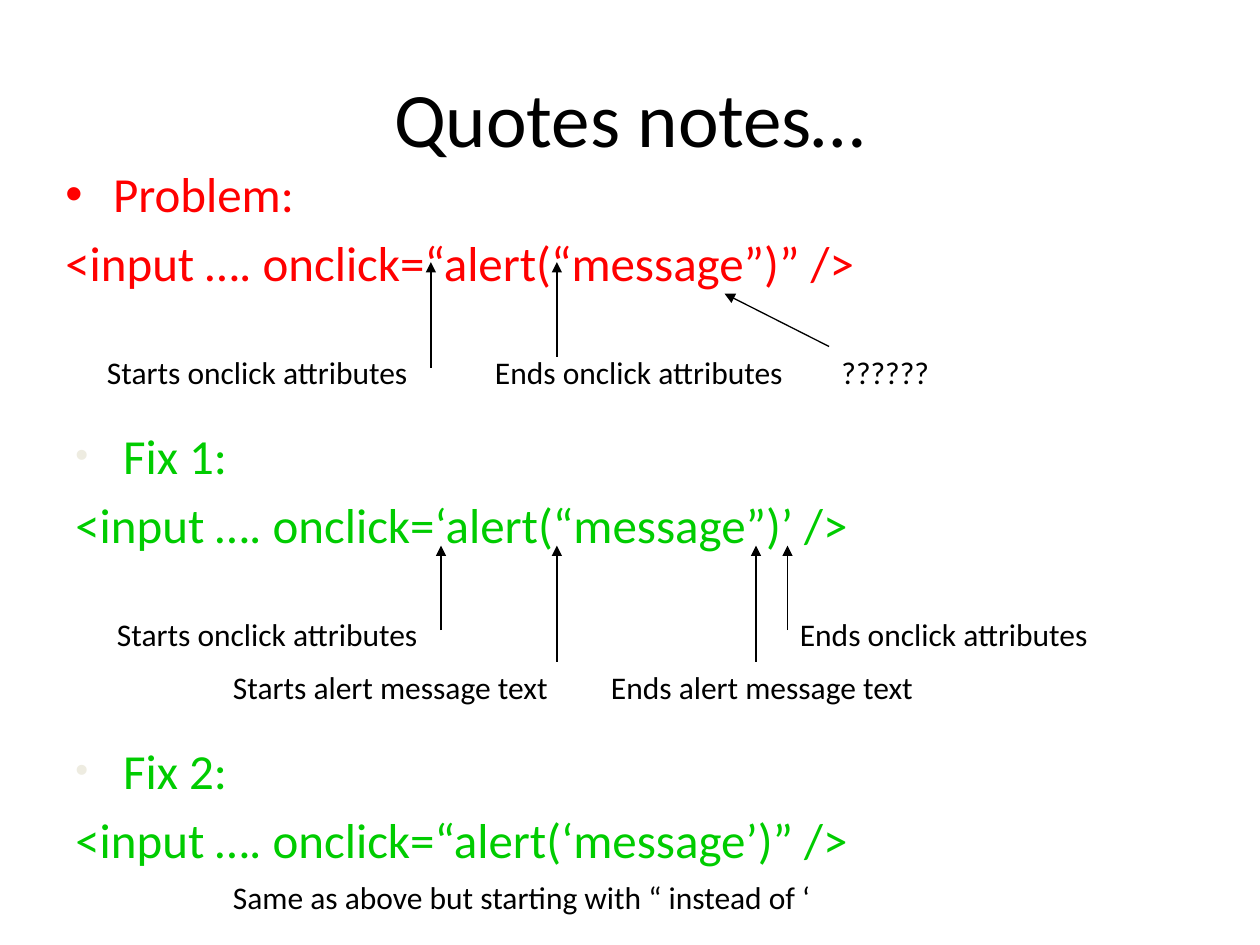
from dataclasses import dataclass
from typing import Optional

from lxml import etree
from pptx import Presentation
from pptx import util as u
from pptx.dml.color import RGBColor
from pptx.enum import shapes, text
from pptx.oxml import ns

FONT = "Calibri"
BLACK, RED, GREEN, PALE = "000000", "FF0000", "00CC00", "EEECE1"


@dataclass
class Example:
    left: float
    top: float
    heading: str
    code: str
    color: str
    bullet_color: Optional[str] = None


@dataclass
class Label:
    left: float
    top: float
    width: float
    words: str


@dataclass
class Arrow:
    start: tuple[float, float]
    end: tuple[float, float]


EXAMPLES = [
    Example(0.42, 1.25, "Problem:", "<input …. onclick=“alert(“message”)” />", RED),
    Example(0.5, 3.33, "Fix 1:", "<input …. onclick=‘alert(“message”)’ />", GREEN, PALE),
    Example(0.5, 5.83, "Fix 2:", "<input …. onclick=“alert(‘message’)” />", GREEN, PALE),
]
LABELS = [
    Label(0.75, 2.75, 2.78, "Starts onclick attributes"),
    Label(3.83, 2.75, 2.7, "Ends onclick attributes"),
    Label(6.58, 2.75, 1.03, "??????"),
    Label(0.83, 4.83, 2.67, "Starts onclick attributes"),
    Label(6.25, 4.83, 2.7, "Ends onclick attributes"),
    Label(1.75, 5.25, 2.75, "Starts alert message text"),
    Label(4.75, 5.25, 2.88, "Ends alert message text"),
    Label(1.75, 6.92, 5.78, "Same as above but starting with “ instead of ‘"),
]
ARROWS = [
    Arrow((3.42, 2.92), (3.42, 2.08)),
    Arrow((4.42, 2.83), (4.42, 2.08)),
    Arrow((6.58, 2.75), (5.75, 2.33)),
    Arrow((3.5, 5), (3.5, 4.33)),
    Arrow((6.25, 5), (6.25, 4.33)),
    Arrow((4.42, 5.25), (4.42, 4.33)),
    Arrow((6, 5.25), (6, 4.33)),
]


def rgb(color: str) -> RGBColor:
    return RGBColor.from_string(color)


def add_element(parent, tag: str, **attributes: str):
    return etree.SubElement(parent, ns.qn(tag), attributes)


def write(paragraph, words: str, size: float, color: str) -> None:
    run = paragraph.add_run()
    run.text = words
    for name, value in {"name": FONT, "size": u.Pt(size)}.items():
        setattr(run.font, name, value)
    run.font.color.rgb = rgb(color)


def add_text_frame(slide, left: float, top: float, width: float, height: float):
    box = slide.shapes.add_textbox(*map(u.Inches, (left, top, width, height)))
    box.text_frame.word_wrap = True
    return box.text_frame


def add_bullet(properties, color: Optional[str]) -> None:
    """Add a bullet; one with its own colour is also drawn smaller."""
    if color:
        add_element(add_element(properties, "a:buClr"), "a:srgbClr", val=color)
        add_element(properties, "a:buSzPct", val="75000")
    add_element(properties, "a:buFont", typeface="Arial")
    add_element(properties, "a:buChar", char="•")


def add_example(slide, example: Example) -> None:
    frame = add_text_frame(slide, example.left, example.top, 9, 0.92)
    heading, code = frame.paragraphs[0], frame.add_paragraph()
    for paragraph, words in ((heading, example.heading), (code, example.code)):
        paragraph.space_before = u.Pt(5.6)
        properties = paragraph._p.get_or_add_pPr()
        properties.set("marL", str(u.Inches(0.38)))
        properties.set("indent", str(u.Inches(-0.38)))
        write(paragraph, words, 28, example.color)
    add_bullet(heading._p.get_or_add_pPr(), example.bullet_color)


def add_label(slide, label: Label) -> None:
    frame = add_text_frame(slide, label.left, label.top, label.width, 0.4)
    frame.auto_size = text.MSO_AUTO_SIZE.SHAPE_TO_FIT_TEXT
    write(frame.paragraphs[0], label.words, 18, BLACK)


def add_arrow(slide, arrow: Arrow) -> None:
    connector = slide.shapes.add_connector(
        shapes.MSO_CONNECTOR.STRAIGHT, *map(u.Inches, arrow.start + arrow.end))
    connector.line.color.rgb = rgb(BLACK)
    connector.line.width = u.Pt(0.75)
    add_element(connector.line._get_or_add_ln(), "a:tailEnd", type="triangle")
    add_element(connector._element.spPr, "a:effectLst")


def set_title(slide, words: str) -> None:
    title = slide.shapes.title
    place = {"left": 0.5, "top": 0.3, "width": 9, "height": 1.25}
    for name, value in place.items():
        setattr(title, name, u.Inches(value))
    title.text_frame.vertical_anchor = text.MSO_ANCHOR.MIDDLE
    paragraph = title.text_frame.paragraphs[0]
    paragraph.alignment = text.PP_ALIGN.CENTER
    write(paragraph, words, 44, BLACK)


def main() -> None:
    presentation = Presentation()
    presentation.slide_width, presentation.slide_height = u.Inches(10), u.Inches(7.5)
    slide = presentation.slides.add_slide(presentation.slide_layouts[5])
    set_title(slide, "Quotes notes…")
    for example in EXAMPLES:
        add_example(slide, example)
    for label in LABELS:
        add_label(slide, label)
    for arrow in ARROWS:
        add_arrow(slide, arrow)
    presentation.save("out.pptx")


if __name__ == "__main__":
    main()
